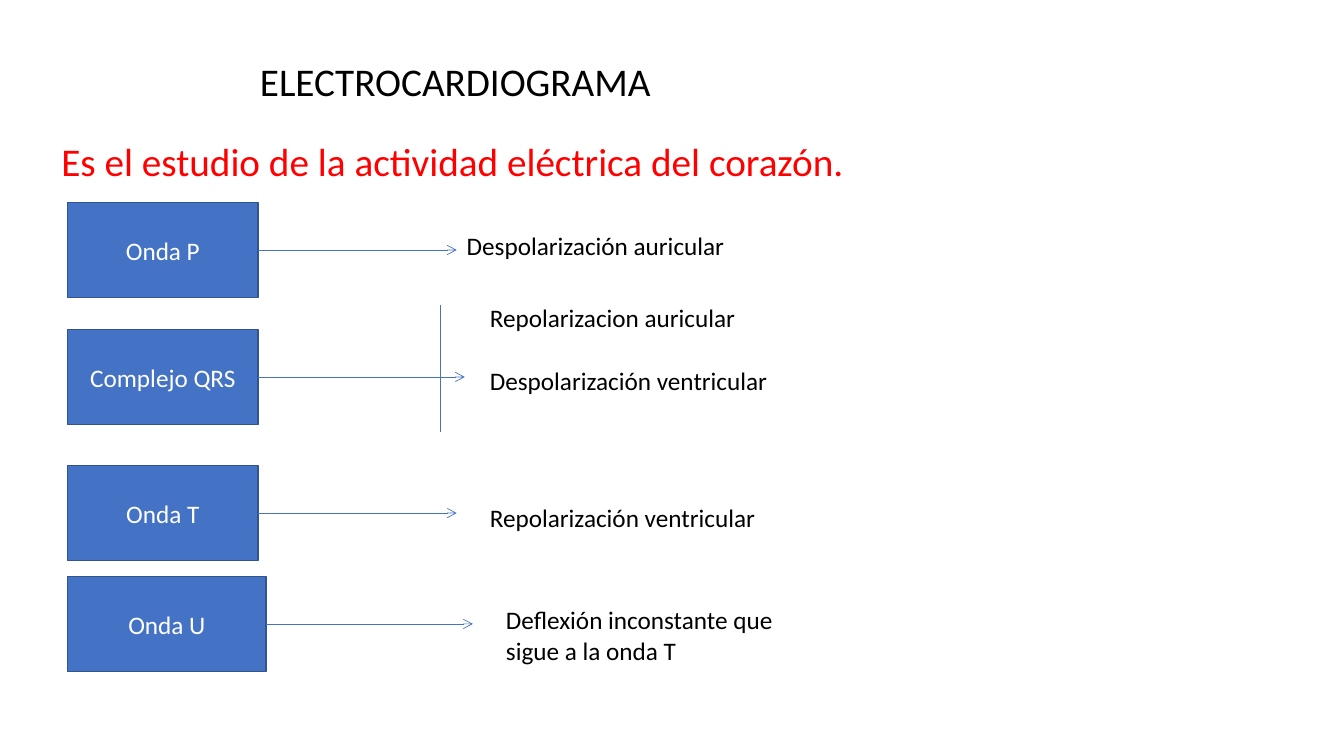
from lxml import etree
from pptx import Presentation
from pptx.dml.color import RGBColor
from pptx.enum.shapes import MSO_CONNECTOR, MSO_SHAPE
from pptx.enum.text import MSO_ANCHOR, PP_ALIGN
from pptx.oxml.ns import qn
from pptx.util import Inches, Pt

RECT = MSO_SHAPE.RECTANGLE
LINE = MSO_CONNECTOR.STRAIGHT
MIDDLE = MSO_ANCHOR.MIDDLE
CENTER = PP_ALIGN.CENTER
RIGHT = 3

COLORS = {"text": "000000", "lead": "FF0000", "box": "4472C4",
          "edge": "325491", "label": "FFFFFF"}
COLORS = {name: RGBColor.from_string(code) for name, code in COLORS.items()}


def write(shape, text, size, color):
    frame = shape.text_frame
    frame.word_wrap = True
    frame.text = text
    font = frame.paragraphs[0].runs[0].font
    font.name = "Calibri"
    font.size = Pt(size)
    font.color.rgb = COLORS[color]


def connect(x1, y1, x2, y2):
    line = slide.shapes.add_connector(
        LINE, Inches(x1), Inches(y1), Inches(x2), Inches(y2))
    line.line.color.rgb = COLORS["box"]
    line.line.width = Pt(0.5)
    etree.SubElement(line._element.spPr, qn("a:effectLst"))
    return line


deck = Presentation()
deck.slide_width = Inches(13.33)
deck.slide_height = Inches(7.5)
slide = deck.slides.add_slide(deck.slide_layouts[6])

left, high = 0.67, 0.94
waves = [
    ("Onda P", 2.01, 1.89, 4.53),
    ("Complejo QRS", 3.27, 1.89, 4.61),
    ("Onda T", 4.62, 1.89, 4.53),
    ("Onda U", 5.72, 1.97, 4.69),
]
for name, top, wide, tip in waves:
    box = slide.shapes.add_shape(
        RECT, Inches(left), Inches(top), Inches(wide), Inches(high))
    box.shadow.inherit = False
    box.fill.solid()
    box.fill.fore_color.rgb = COLORS["box"]
    box.line.color.rgb = COLORS["edge"]
    box.line.width = Pt(1)
    write(box, name, 18, "label")
    box.text_frame.vertical_anchor = MIDDLE
    box.text_frame.paragraphs[0].alignment = CENTER

    mid = top + high / 2
    arrow = connect(left + wide, mid, tip, mid)
    arrow.begin_connect(box, RIGHT)
    etree.SubElement(arrow.line._get_or_add_ln(), qn("a:tailEnd"), type="arrow")

connect(4.37, 4.29, 4.37, 3.03)

texts = [
    ("ELECTROCARDIOGRAMA", 2.48, 0.52, 5.04, 0.57, 28, "text"),
    ("Es el estudio de la actividad eléctrica del corazón.",
     0.51, 1.31, 9.13, 0.57, 28, "lead"),
    ("Despolarización auricular", 4.53, 2.24, 4.02, 0.4, 18, "text"),
    ("Repolarizacion auricular", 4.76, 2.95, 3.23, 0.4, 18, "text"),
    ("Despolarización ventricular", 4.76, 3.58, 3.39, 0.4, 18, "text"),
    ("Repolarización ventricular", 4.76, 4.93, 3.39, 0.4, 18, "text"),
    ("Deflexión inconstante que sigue a la onda T",
     4.92, 5.95, 3.31, 0.71, 18, "text"),
]
for text, x, y, wide, tall, size, color in texts:
    note = slide.shapes.add_textbox(
        Inches(x), Inches(y), Inches(wide), Inches(tall))
    write(note, text, size, color)

deck.save("out.pptx")
